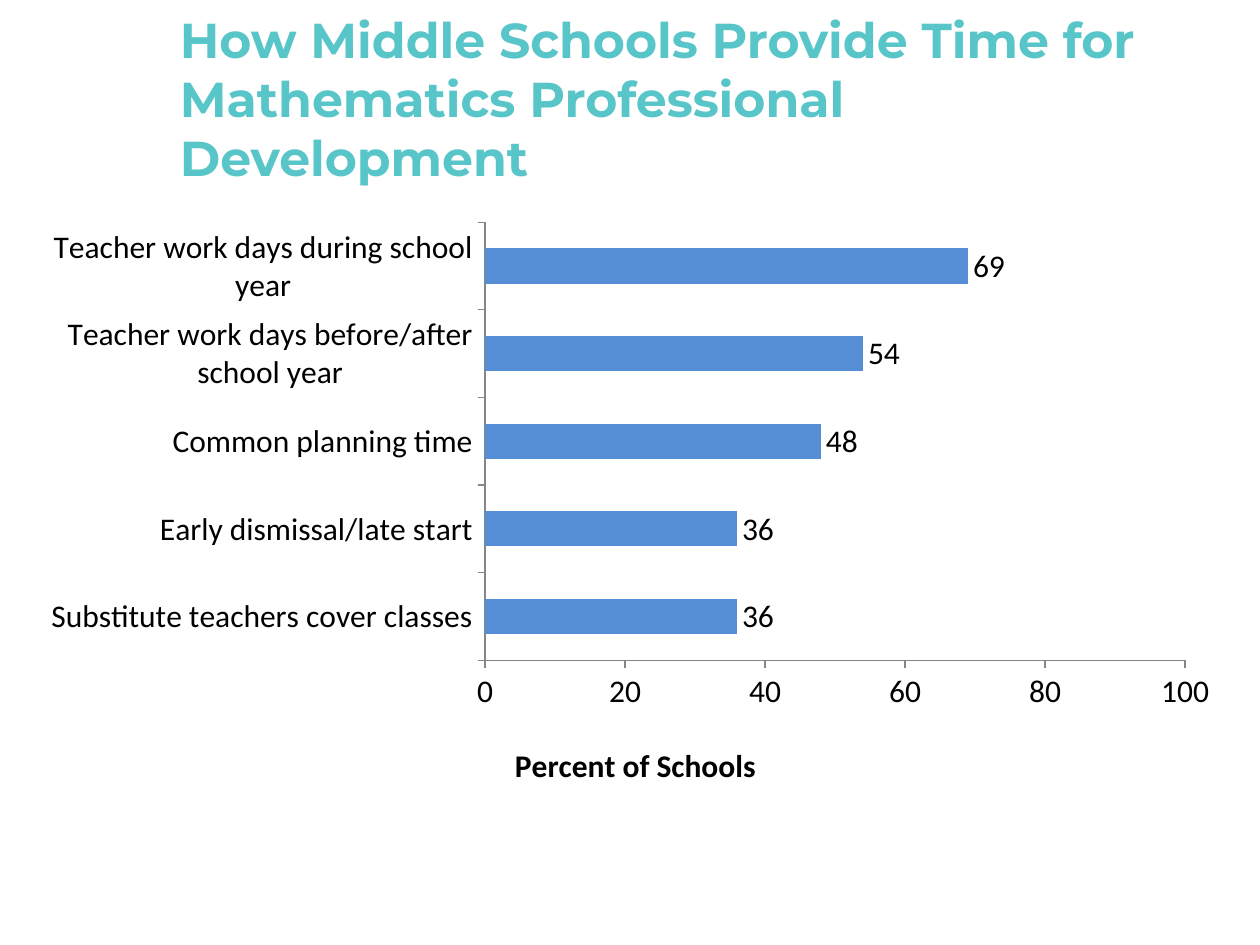
from dataclasses import dataclass
from typing import Any

from pptx import Presentation
from pptx.chart.data import CategoryChartData
from pptx.dml.color import RGBColor
from pptx.enum.chart import XL_CHART_TYPE as ChartType
from pptx.enum.chart import XL_LABEL_POSITION as LabelPosition
from pptx.enum.chart import XL_TICK_MARK as TickMark
from pptx.enum.text import MSO_ANCHOR as Anchor
from pptx.oxml import parse_xml
from pptx.oxml.ns import nsdecls, qn
from pptx.util import Inches, Pt

SCHOOL_PERCENTS = {
    "Substitute teachers cover classes": 36,
    "Early dismissal/late start": 36,
    "Common planning time": 48,
    "Teacher work days before/after school year": 54,
    "Teacher work days during school year": 69,
}


def color(hex_code):
    return RGBColor.from_string(hex_code)


def style_font(font, name, size, hex_code, bold=False):
    font.name, font.size, font.bold = name, Pt(size), bold
    font.color.rgb = color(hex_code)


def write_text(frame, text, **font_format):
    paragraph = frame.paragraphs[0]
    run = paragraph.add_run()
    run.text = text
    style_font(run.font, **font_format)


def place_in_chart(element, index, **fractions):
    for layout in element.findall(qn("c:layout")):
        element.remove(layout)
    target = '<c:layoutTarget val="inner"/>' if "w" in fractions else ""
    modes = "".join(f'<c:{axis}Mode val="edge"/>' for axis in "xy")
    values = "".join(f'<c:{key} val="{value}"/>' for key, value in fractions.items())
    element.insert(index, parse_xml(
        f'<c:layout {nsdecls("c")}><c:manualLayout>{target}{modes}{values}'
        "</c:manualLayout></c:layout>"))


@dataclass
class SlideBuilder:
    """Hold the style and the current slide, and add each kind of element."""

    slide: Any
    title_font: str = "Montserrat"
    chart_font: str = "Calibri"
    title_color: str = "58C5C9"
    text_color: str = "000000"
    bar_color: str = "558ED5"
    axis_color: str = "868686"

    def add_title(self, text, left, top, width, height):
        shape = self.slide.shapes.add_textbox(
            Inches(left), Inches(top), Inches(width), Inches(height))
        frame = shape.text_frame
        frame.word_wrap = True
        frame.vertical_anchor = Anchor.MIDDLE
        write_text(frame, text, name=self.title_font, size=28,
                   hex_code=self.title_color, bold=True)

    def style_axis(self, axis):
        axis.has_major_gridlines = False
        axis.major_tick_mark = TickMark.OUTSIDE
        axis.minor_tick_mark = TickMark.NONE
        axis.format.line.color.rgb = color(self.axis_color)
        axis.format.line.width = Pt(0.75)
        style_font(axis.tick_labels.font, self.chart_font, 18, self.text_color)

    def add_bar_chart(self, percents, axis_title, left, top, width, height):
        data = CategoryChartData(number_format="0")
        data.categories = list(percents)
        data.add_series("Series 1", list(percents.values()))
        chart = self.slide.shapes.add_chart(
            ChartType.BAR_CLUSTERED, Inches(left), Inches(top),
            Inches(width), Inches(height), data).chart
        chart.has_legend = chart.has_title = False
        style_font(chart.font, self.chart_font, 18, self.text_color)

        plot = chart.plots[0]
        plot.gap_width = 150
        plot.vary_by_categories = False
        fill = plot.series[0].format.fill
        fill.solid()
        fill.fore_color.rgb = color(self.bar_color)
        plot.has_data_labels = True
        labels = plot.data_labels
        labels.show_value = True
        labels.position = LabelPosition.OUTSIDE_END
        style_font(labels.font, self.chart_font, 18, self.text_color)

        value_axis = chart.value_axis
        for axis in (chart.category_axis, value_axis):
            self.style_axis(axis)
        value_axis.minimum_scale, value_axis.maximum_scale = 0, 100
        value_axis.major_unit = 20
        title = value_axis.axis_title
        write_text(title.text_frame, axis_title, name=self.chart_font, size=18,
                   hex_code=self.text_color, bold=True)
        place_in_chart(title._element, 1, x=0.4, y=0.89)
        place_in_chart(plot._element.getparent(), 0, x=0.38, y=0.02, w=0.58, h=0.74)


def main():
    presentation = Presentation()
    presentation.slide_width, presentation.slide_height = Inches(10), Inches(7.5)
    builder = SlideBuilder(presentation.slides.add_slide(presentation.slide_layouts[6]))
    builder.add_bar_chart(SCHOOL_PERCENTS, "Percent of Schools", 0.21, 1.67, 9.58, 4.7)
    builder.add_title(
        "How Middle Schools Provide Time for Mathematics Professional Development",
        1.33, 0.3, 7.83, 0.95)
    presentation.save("out.pptx")


if __name__ == "__main__":
    main()
